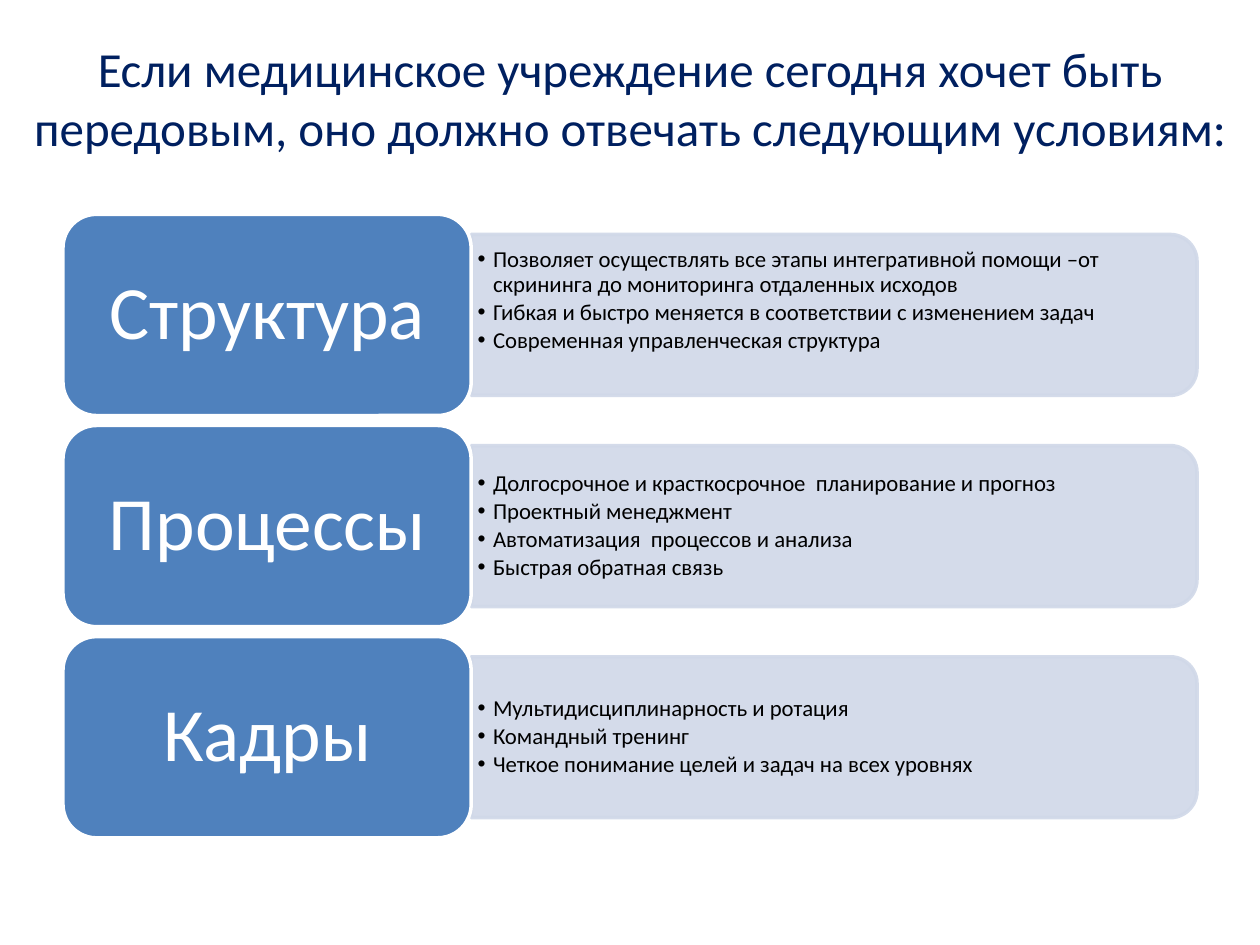
from dataclasses import dataclass

from lxml.etree import SubElement
from pptx import Presentation
from pptx.dml.color import RGBColor
from pptx.enum.shapes import MSO_SHAPE
from pptx.enum.text import MSO_ANCHOR, PP_ALIGN
from pptx.oxml.ns import qn
from pptx.util import Cm, Pt


@dataclass(frozen=True)
class Theme:
    font: str = "Calibri"
    title_color: RGBColor = RGBColor(0x00, 0x20, 0x60)
    label_fill: RGBColor = RGBColor(0x4F, 0x81, 0xBD)
    panel_fill: RGBColor = RGBColor(0xD0, 0xD8, 0xE8)
    light: RGBColor = RGBColor(0xFF, 0xFF, 0xFF)
    dark: RGBColor = RGBColor(0x00, 0x00, 0x00)
    title_size: Pt = Pt(28)
    label_size: Pt = Pt(43)
    bullet_size: Pt = Pt(13)
    line_width: Pt = Pt(2)
    panel_opacity: int = 90


@dataclass(frozen=True)
class Box:
    left: int
    top: int
    width: int
    height: int


THEME = Theme()
TITLE = ("Если медицинское учреждение сегодня хочет быть передовым, "
         "оно должно отвечать следующим условиям:")
# Each condition: label, bullets, extra space below the bullets
CONDITIONS = [
    ("Структура", [
        "Позволяет осуществлять все этапы интегративной помощи –от "
        "скрининга до мониторинга отдаленных исходов",
        "Гибкая и быстро меняется в соответствии с изменением задач",
        "Современная управленческая структура",
    ], Cm(0.57)),
    ("Процессы", [
        "Долгосрочное и красткосрочное  планирование и прогноз",
        "Проектный менеджмент",
        "Автоматизация  процессов и анализа",
        "Быстрая обратная связь",
    ], Cm(0)),
    ("Кадры", [
        "Мультидисциплинарность и ротация",
        "Командный тренинг",
        "Четкое понимание целей и задач на всех уровнях",
    ], Cm(0)),
]


def add_run(paragraph, text, size, color):
    run = paragraph.add_run()
    run.text = text
    run.font.name = THEME.font
    run.font.size = size
    run.font.color.rgb = color


def prepare_frame(shape, horizontal, vertical):
    """Wrap and centre the text vertically, with the given insets."""
    frame = shape.text_frame
    frame.word_wrap = True
    frame.vertical_anchor = MSO_ANCHOR.MIDDLE
    frame.margin_left = frame.margin_right = horizontal
    frame.margin_top = frame.margin_bottom = vertical
    return frame


def add_filled_shape(slide, kind, box, fill, line):
    shape = slide.shapes.add_shape(kind, box.left, box.top, box.width, box.height)
    shape.shadow.inherit = False
    shape.fill.solid()
    shape.fill.fore_color.rgb = fill
    shape.line.color.rgb = line
    shape.line.width = THEME.line_width
    return shape


def add_bullet(paragraph):
    properties = paragraph._p.get_or_add_pPr()
    properties.set("marL", str(Cm(0.31)))
    properties.set("indent", str(-Cm(0.31)))
    SubElement(properties, qn("a:buFont"), typeface="Arial")
    SubElement(properties, qn("a:buChar"), char="•")


def add_title(slide, box):
    shape = slide.shapes.add_textbox(box.left, box.top, box.width, box.height)
    paragraph = prepare_frame(shape, Cm(0.25), Cm(0.13)).paragraphs[0]
    paragraph.alignment = PP_ALIGN.CENTER
    add_run(paragraph, TITLE, THEME.title_size, THEME.title_color)


def add_panel(slide, box):
    """Draw a panel rounded on its right side, as a turned top-rounded shape."""
    turned = Box(box.left + (box.width - box.height) // 2,
                 box.top + (box.height - box.width) // 2,
                 box.height, box.width)
    panel = add_filled_shape(slide, MSO_SHAPE.ROUND_2_SAME_RECTANGLE, turned,
                             THEME.panel_fill, THEME.panel_fill)
    panel.rotation = 90
    for color in panel._element.spPr.iter(qn("a:srgbClr")):
        SubElement(color, qn("a:alpha"), val=str(THEME.panel_opacity * 1000))


def add_bullets(slide, box, bullets, space_below):
    shape = slide.shapes.add_textbox(box.left, box.top, box.width, box.height)
    frame = prepare_frame(shape, Cm(0.13), Cm(0.07))
    frame.margin_bottom += space_below
    for index, text in enumerate(bullets):
        paragraph = frame.add_paragraph() if index else frame.paragraphs[0]
        paragraph.line_spacing = 0.9
        paragraph.space_after = Pt(2)
        add_bullet(paragraph)
        add_run(paragraph, text, THEME.bullet_size, THEME.dark)


def add_label(slide, box, text):
    shape = add_filled_shape(slide, MSO_SHAPE.ROUNDED_RECTANGLE, box,
                             THEME.label_fill, THEME.light)
    paragraph = prepare_frame(shape, Cm(0.46), Cm(0.23)).paragraphs[0]
    paragraph.alignment = PP_ALIGN.CENTER
    paragraph.line_spacing = 0.9
    add_run(paragraph, text, THEME.label_size, THEME.light)


def add_condition(slide, box, label, bullets, space_below):
    label_width = Cm(8.23)
    panel_height = int(box.height * 0.8)
    panel_left = box.left + label_width
    panel_width = box.width - label_width
    panel_top = box.top + (box.height - panel_height) // 2
    text_inset = Cm(0.16)

    add_panel(slide, Box(panel_left, panel_top, panel_width, panel_height))
    add_bullets(slide, Box(panel_left, panel_top + text_inset,
                           panel_width - text_inset,
                           panel_height - 2 * text_inset), bullets, space_below)
    add_label(slide, Box(box.left, box.top, label_width, box.height), label)


def add_conditions(slide, box):
    gap = Cm(0.2)
    height = (box.height - gap * (len(CONDITIONS) - 1)) // len(CONDITIONS)
    for index, condition in enumerate(CONDITIONS):
        row = Box(box.left, box.top + index * (height + gap), box.width, height)
        add_condition(slide, row, *condition)


def main():
    presentation = Presentation()
    presentation.slide_width = Cm(25.4)
    presentation.slide_height = Cm(19.05)
    slide = presentation.slides.add_slide(presentation.slide_layouts[6])
    add_title(slide, Box(0, 0, presentation.slide_width, Cm(3.94)))
    add_conditions(slide, Box(Cm(1.27), Cm(4.32), Cm(22.86), Cm(12.57)))
    presentation.save("out.pptx")


if __name__ == "__main__":
    main()
